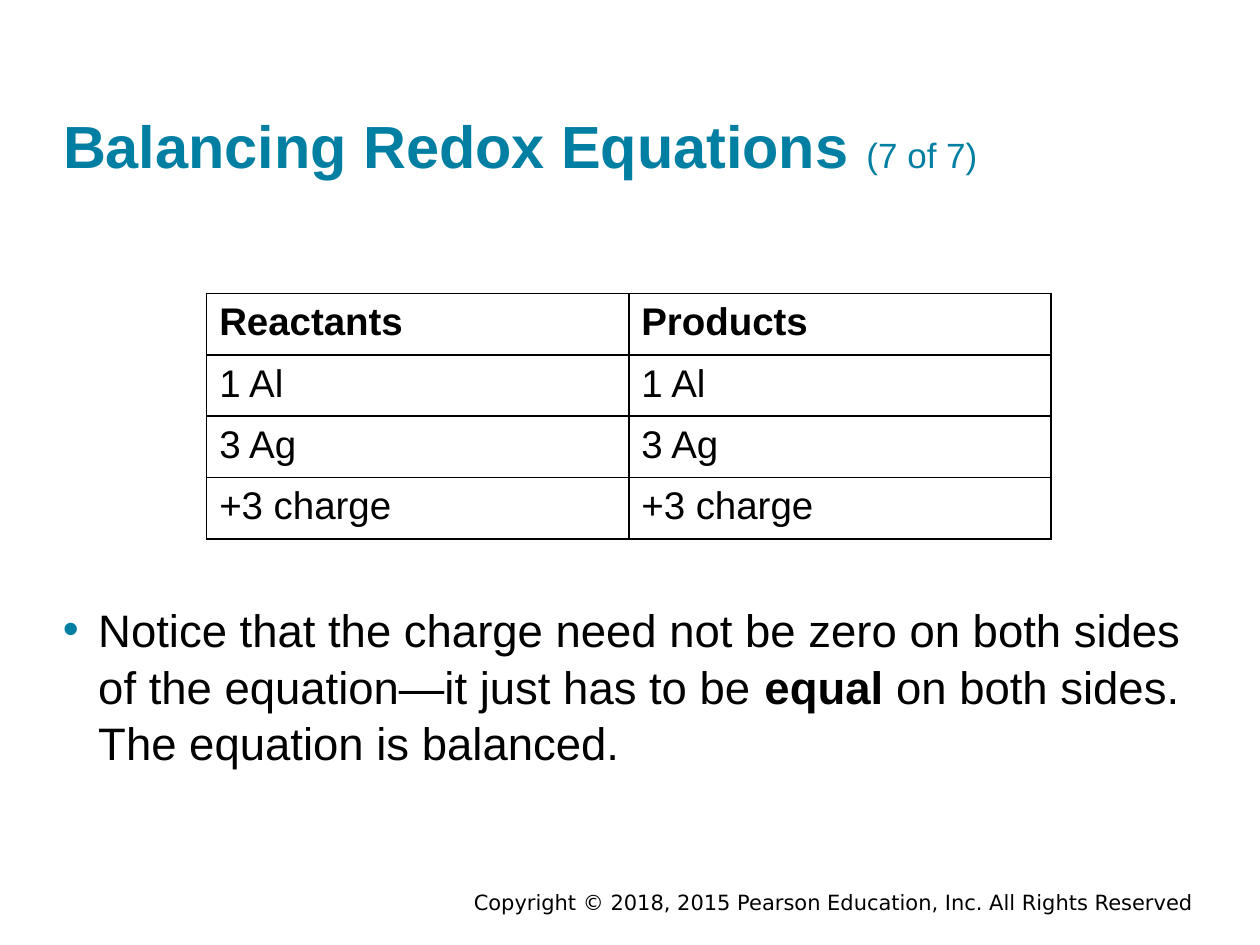
from lxml import etree
from pptx import Presentation
from pptx.dml.color import RGBColor
from pptx.enum.text import MSO_ANCHOR, MSO_AUTO_SIZE, PP_ALIGN
from pptx.oxml.ns import qn
from pptx.util import Inches, Pt

TITLE_ONLY = 5
LEFT, RIGHT = PP_ALIGN.LEFT, PP_ALIGN.RIGHT
BOTTOM = MSO_ANCHOR.BOTTOM
NO_AUTOFIT = MSO_AUTO_SIZE.NONE
COLORS = {"accent": "007FA3", "text": "000000"}
BORDERS = ("a:lnL", "a:lnR", "a:lnT", "a:lnB")


class SlideBuilder:
    """Holds the fonts and the current slide; boxes are (left, top, width, height) in inches."""

    body_font = "Arial"
    footer_font = "DejaVu Sans"

    def __init__(self, presentation):
        self.slide = presentation.slides.add_slide(presentation.slide_layouts[TITLE_ONLY])

    def add_runs(self, paragraph, runs, color="text", font=None):
        """Adds (text, size, bold) runs to a paragraph."""
        for text, size, bold in runs:
            run = paragraph.add_run()
            run.text = text
            run.font.size = Pt(size)
            run.font.bold = bold
            run.font.name = font or self.body_font
            run.font.color.rgb = RGBColor.from_string(COLORS[color])

    def clear_margins(self, text_frame):
        text_frame.margin_left = text_frame.margin_right = 0
        text_frame.margin_top = text_frame.margin_bottom = 0

    def title(self, box, runs):
        shape = self.slide.shapes.title
        shape.left, shape.top, shape.width, shape.height = map(Inches, box)
        text_frame = shape.text_frame
        self.clear_margins(text_frame)
        text_frame.word_wrap = True
        text_frame.auto_size = NO_AUTOFIT
        text_frame.vertical_anchor = BOTTOM
        paragraph = text_frame.paragraphs[0]
        paragraph.alignment = LEFT
        self.add_runs(paragraph, runs, "accent")

    def text_box(self, box):
        text_frame = self.slide.shapes.add_textbox(*map(Inches, box)).text_frame
        text_frame.word_wrap = True
        return text_frame

    def bullet(self, box, runs, indent):
        text_frame = self.text_box(box)
        self.clear_margins(text_frame)
        paragraph = text_frame.paragraphs[0]
        properties = paragraph._p.get_or_add_pPr()
        properties.set("marL", str(Inches(indent)))
        properties.set("indent", str(-Inches(indent)))
        bullet_color = etree.SubElement(properties, qn("a:buClr"))
        etree.SubElement(bullet_color, qn("a:srgbClr"), val=COLORS["accent"])
        etree.SubElement(properties, qn("a:buFont"), typeface=self.body_font)
        etree.SubElement(properties, qn("a:buChar"), char="•")
        paragraph.line_spacing = 1.04
        self.add_runs(paragraph, runs)

    def footer(self, box, text, size):
        paragraph = self.text_box(box).paragraphs[0]
        paragraph.alignment = RIGHT
        self.add_runs(paragraph, [(text, size, False)], font=self.footer_font)

    def border(self, cell, width=1):
        properties = cell._tc.get_or_add_tcPr()
        for position, tag in enumerate(BORDERS):
            line = etree.Element(qn(tag), w=str(Pt(width)))
            fill = etree.SubElement(line, qn("a:solidFill"))
            etree.SubElement(fill, qn("a:srgbClr"), val=COLORS["text"])
            properties.insert(position, line)

    def table(self, box, rows, size):
        table = self.slide.shapes.add_table(len(rows), len(rows[0]), *map(Inches, box)).table
        table.first_row = table.horz_banding = False
        for row_index, row in enumerate(rows):
            for column_index, text in enumerate(row):
                cell = table.cell(row_index, column_index)
                cell.fill.background()
                cell.margin_left = cell.margin_right = Inches(0.1)
                cell.margin_top = cell.margin_bottom = Inches(0.06)
                self.add_runs(cell.text_frame.paragraphs[0], [(text, size, row_index == 0)])
                self.border(cell)


def main():
    presentation = Presentation()
    presentation.slide_width, presentation.slide_height = Inches(10), Inches(7.5)
    builder = SlideBuilder(presentation)
    builder.footer(
        (1.74, 7.01, 7.83, 0.3),
        "Copyright © 2018, 2015 Pearson Education, Inc. All Rights Reserved",
        12,
    )
    builder.title(
        (0.5, 0.24, 9, 1.2),
        [("Balancing Redox Equations", 34, True), (" ", 36, False), ("(7 of 7)", 20, False)],
    )
    balance = ["1 Al", "3 Ag", "+3 charge"]
    builder.table(
        (1.64, 2.33, 6.7, 1.9),
        [("Reactants", "Products"), *zip(balance, balance)],
        22,
    )
    builder.bullet(
        (0.5, 4.76, 9.16, 1.4),
        [
            ("Notice that the charge need not be zero on both sides of the equation—it just has to be ", 26, False),
            ("equal", 26, True),
            (" on both sides. The equation is balanced.", 26, False),
        ],
        indent=0.28,
    )
    presentation.save("out.pptx")


if __name__ == "__main__":
    main()
